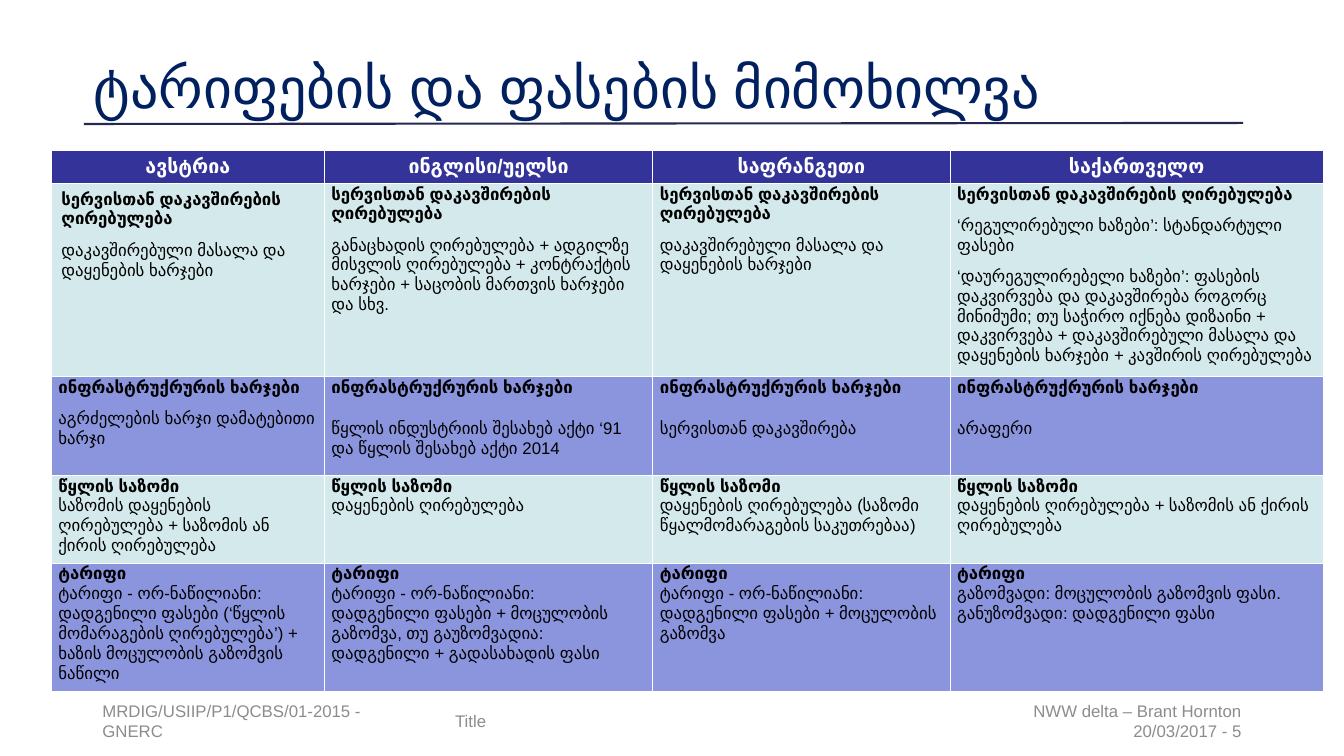
from lxml import etree
from pptx import Presentation
from pptx import util as u
from pptx.dml.color import RGBColor
from pptx.enum import shapes, text
from pptx.oxml.ns import qn

COLS, ROWS = 160, 90
NAVY, GREY, BLACK, WHITE = "002060", "8C8C8C", "000000", "FFFFFF"
INDIGO, PALE, VIOLET = "333399", "D4E9EC", "8B95DD"
LEFT, CENTER, RIGHT = text.PP_ALIGN.LEFT, text.PP_ALIGN.CENTER, text.PP_ALIGN.RIGHT

COUNTRIES = ["ავსტრია", "ინგლისი/უელსი", "საფრანგეთი", "საქართველო"]
CONNECTION = "დაკავშირებული მასალა და დაყენების ხარჯები"
TWO_PART = "ტარიფი - ორ-ნაწილიანი:"
TOPICS = [
    ("სერვისთან დაკავშირების ღირებულება", PALE, [8] * 4, [
        [CONNECTION],
        ["განაცხადის ღირებულება + ადგილზე მისვლის ღირებულება + კონტრაქტის ხარჯები + "
         "საცობის მართვის ხარჯები და სხვ."],
        [CONNECTION],
        ["‘რეგულირებული ხაზები’: სტანდარტული ფასები",
         "‘დაურეგულირებელი ხაზები’: ფასების დაკვირვება და დაკავშირება როგორც მინიმუმი; "
         "თუ საჭირო იქნება დიზაინი + დაკვირვება + დაკავშირებული მასალა და დაყენების "
         "ხარჯები + კავშირის ღირებულება"],
    ]),
    ("ინფრასტრუქრურის ხარჯები", VIOLET, [8, 15, 15, 15], [
        ["აგრძელების ხარჯი დამატებითი ხარჯი"],
        ["წყლის ინდუსტრიის შესახებ აქტი ‘91 და წყლის შესახებ აქტი 2014"],
        ["სერვისთან დაკავშირება"],
        ["არაფერი"],
    ]),
    ("წყლის საზომი", PALE, [0] * 4, [
        ["საზომის დაყენების ღირებულება + საზომის ან ქირის ღირებულება"],
        ["დაყენების ღირებულება"],
        ["დაყენების ღირებულება (საზომი წყალმომარაგების საკუთრებაა)"],
        ["დაყენების ღირებულება + საზომის ან ქირის ღირებულება"],
    ]),
    ("ტარიფი", VIOLET, [0] * 4, [
        [TWO_PART, "დადგენილი ფასები (‘წყლის მომარაგების ღირებულება’) + ხაზის მოცულობის "
                   "გაზომვის ნაწილი"],
        [TWO_PART, "დადგენილი ფასები + მოცულობის გაზომვა, თუ გაუზომვადია: დადგენილი + "
                   "გადასახადის ფასი"],
        [TWO_PART, "დადგენილი ფასები + მოცულობის გაზომვა"],
        ["გაზომვადი: მოცულობის გაზომვის ფასი.", "განუზომვადი: დადგენილი ფასი"],
    ]),
]


def rgb(value):
    return RGBColor.from_string(value)


def write(tf, content, first=False, size=12, bold=False, color=BLACK, align=LEFT, line=1.0, after=0):
    p = tf.paragraphs[0] if first else tf.add_paragraph()
    p.alignment, p.line_spacing, p.space_after = align, line, u.Pt(after)
    r = p.add_run()
    r.text = content
    r.font.name, r.font.size, r.font.bold = "Arial", u.Pt(size), bold
    r.font.color.rgb = rgb(color)


class Deck:
    font_line = 1.06

    def __init__(self):
        self.prs = Presentation()
        self.prs.slide_width, self.prs.slide_height = u.Inches(13.33), u.Inches(7.5)
        self.s = self.prs.slides.add_slide(self.prs.slide_layouts[6])

    def x(self, cols):
        return round(self.prs.slide_width * cols / COLS)

    def y(self, rows):
        return round(self.prs.slide_height * rows / ROWS)

    def label(self, lines, left, top, width, height, inset_top=0.6, **fmt):
        sp = self.s.shapes.add_textbox(self.x(left), self.y(top), self.x(width), self.y(height))
        tf = sp.text_frame
        tf.word_wrap = True
        tf.vertical_anchor = text.MSO_ANCHOR.MIDDLE
        tf.margin_top = self.y(inset_top)
        for i, content in enumerate(lines):
            write(tf, content, first=i == 0, **fmt)

    def rule(self, x1, y1, x2, y2, color, width):
        line = self.s.shapes.add_connector(
            shapes.MSO_CONNECTOR.STRAIGHT, self.x(x1), self.y(y1), self.x(x2), self.y(y2))
        line.line.color.rgb, line.line.width = rgb(color), u.Pt(width)
        etree.SubElement(line._element.spPr, qn("a:effectLst"))

    def table(self, left, top, widths, heights):
        frame = self.s.shapes.add_table(
            len(heights), len(widths), self.x(left), self.y(top),
            self.x(sum(widths)), self.y(sum(heights)))
        table = frame.table
        table.horz_banding = False
        for column, width in zip(table.columns, widths):
            column.width = self.x(width)
        for row, height in zip(table.rows, heights):
            row.height = self.y(height)
        return table

    def cell(self, cell, fill, side=0.84, edge=0.0, anchor=text.MSO_ANCHOR.TOP):
        tc_pr = cell._tc.get_or_add_tcPr()
        for name in ("lnL", "lnR", "lnT", "lnB"):
            border = etree.SubElement(tc_pr, qn("a:" + name), w=str(u.Pt(1)))
            solid = etree.SubElement(border, qn("a:solidFill"))
            etree.SubElement(solid, qn("a:srgbClr"), val=WHITE)
        cell.fill.solid()
        cell.fill.fore_color.rgb = rgb(fill)
        cell.margin_left = cell.margin_right = self.x(side)
        cell.margin_top = cell.margin_bottom = self.y(edge)
        cell.vertical_anchor = anchor
        return cell.text_frame


def main():
    deck = Deck()
    deck.label(["ტარიფების და ფასების მიმოხილვა"], 10, 0, 138, 17.4,
               inset_top=4.8, size=40, color=NAVY, line=0.9)
    for lines, left, width, align in [
        (["MRDIG/USIIP/P1/QCBS/01-2015 - GNERC"], 11, 40.9, LEFT),
        (["Title"], 53, 54, LEFT),
        (["NWW delta – Brant Hornton", "20/03/2017 - 5"], 109.9, 39.1, RIGHT),
    ]:
        deck.label(lines, left, 83.4, width, 4.8, color=GREY, align=align)
    deck.rule(10, 14.76, 148, 14.64, "242852", 1.5)

    table = deck.table(6.12, 17.9, [32.5, 39.1, 35.4, 44.4], [3.96, 22.8, 11.76, 10.44, 10.44])
    for col, country in enumerate(COUNTRIES):
        tf = deck.cell(table.cell(0, col), INDIGO, anchor=text.MSO_ANCHOR.MIDDLE)
        write(tf, country, first=True, size=14, bold=True, color=WHITE, align=CENTER)
    for row, (topic, fill, gaps, entries) in enumerate(TOPICS, 1):
        for col, (gap, entry) in enumerate(zip(gaps, entries)):
            inset = {"side": 1.2, "edge": 0.6} if (row, col) == (1, 0) else {}
            tf = deck.cell(table.cell(row, col), fill, **inset)
            write(tf, topic, first=True, bold=True, line=deck.font_line, after=gap)
            for content in entry:
                write(tf, content, line=deck.font_line, after=8 if row == 1 else 0)

    deck.prs.save("out.pptx")


if __name__ == "__main__":
    main()
